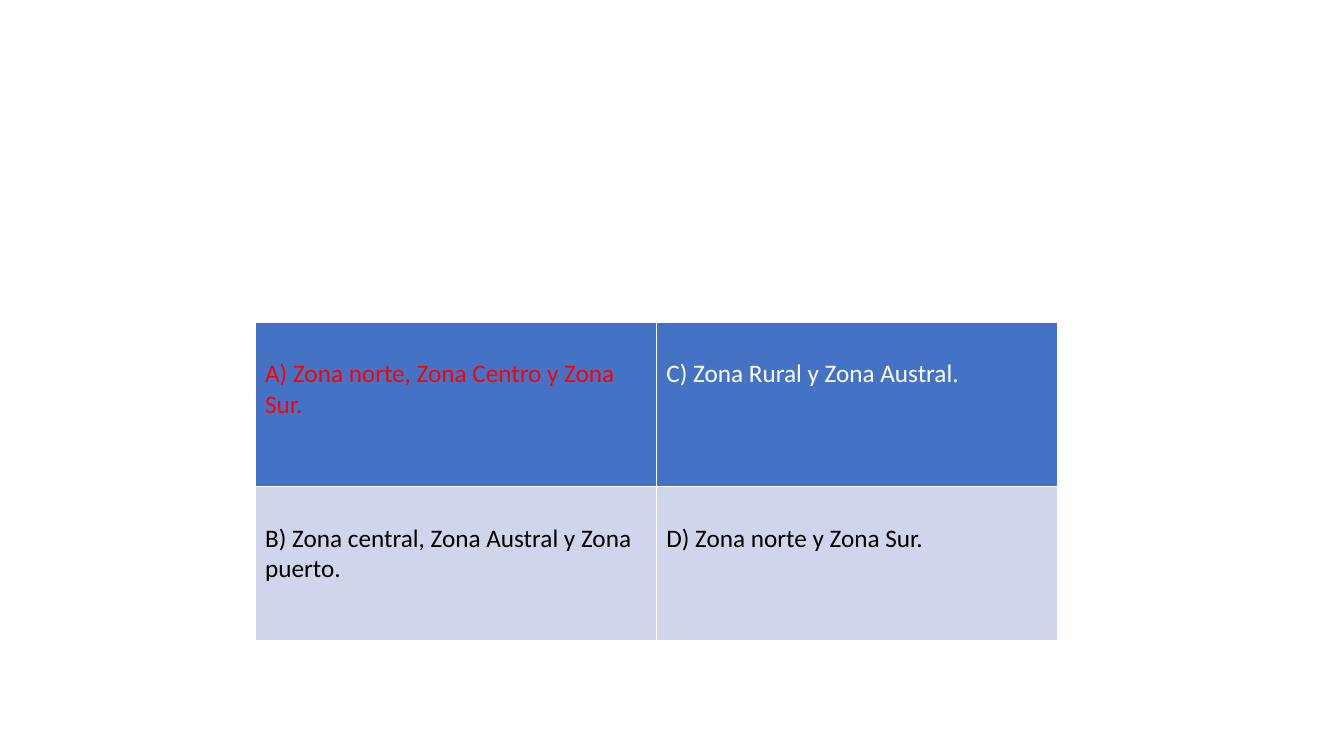
from lxml import etree
from pptx import Presentation, util as u
from pptx.dml.color import RGBColor
from pptx.oxml.ns import qn

COLORS = {"blue": "4472C4", "pale": "CFD5EA", "red": "FF0000",
          "white": "FFFFFF", "black": "000000"}

# Each row: fill, height in inches, then (answer, text colour) per column
ROWS = [
    ("blue", 1.63, [("A) Zona norte, Zona Centro y Zona Sur.", "red"),
                    ("C) Zona Rural y Zona Austral.", "white")]),
    ("pale", 1.53, [("B) Zona central, Zona Austral y Zona puerto.", "black"),
                    ("D) Zona norte y Zona Sur.", "black")]),
]
LEFT, TOP, COLUMN_WIDTH = 2.53, 3.2, 3.98
TOP_MARGIN = 0.36


def add_borders(cell, color, points):
    properties = cell._tc.get_or_add_tcPr()
    for index, side in enumerate(("lnL", "lnR", "lnT", "lnB")):
        line = etree.Element(qn("a:" + side), w=str(u.Pt(points)))
        fill = etree.SubElement(line, qn("a:solidFill"))
        etree.SubElement(fill, qn("a:srgbClr"), val=COLORS[color])
        properties.insert(index, line)


def fill_cell(cell, answer, text_color, fill_color):
    cell.fill.solid()
    cell.fill.fore_color.rgb = RGBColor.from_string(COLORS[fill_color])
    cell.margin_top = u.Inches(TOP_MARGIN)
    cell.text_frame.text = answer
    font = cell.text_frame.paragraphs[0].runs[0].font
    font.name, font.size, font.bold = "Calibri", u.Pt(18), False
    font.color.rgb = RGBColor.from_string(COLORS[text_color])
    add_borders(cell, "white", 1)


presentation = Presentation()
presentation.slide_width = u.Inches(13.33)
presentation.slide_height = u.Inches(7.5)
slide = presentation.slides.add_slide(presentation.slide_layouts[6])

# Table of answers
column_count = len(ROWS[0][2])
table = slide.shapes.add_table(
    len(ROWS), column_count, u.Inches(LEFT), u.Inches(TOP),
    u.Inches(COLUMN_WIDTH * column_count),
    u.Inches(sum(height for _, height, _ in ROWS))).table
for column in table.columns:
    column.width = u.Inches(COLUMN_WIDTH)
for row_index, (fill_color, height, answers) in enumerate(ROWS):
    table.rows[row_index].height = u.Inches(height)
    for column_index, (answer, text_color) in enumerate(answers):
        fill_cell(table.cell(row_index, column_index), answer, text_color, fill_color)

presentation.save("out.pptx")
